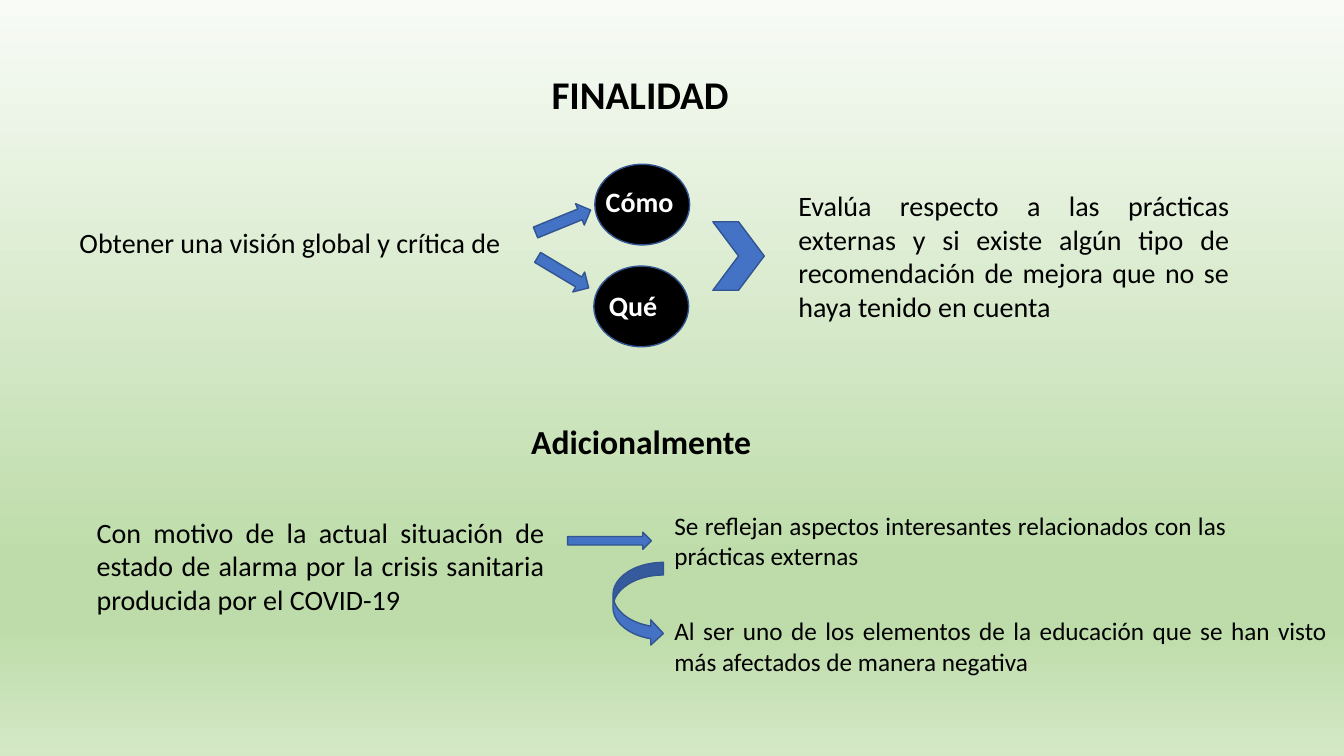
from dataclasses import dataclass

from lxml.etree import SubElement
from pptx import Presentation
from pptx.dml.color import RGBColor
from pptx.enum.shapes import MSO_SHAPE as Preset
from pptx.enum.text import MSO_ANCHOR as Anchor, MSO_AUTO_SIZE as AutoSize, PP_ALIGN as Align
from pptx.oxml.ns import qn
from pptx.util import Inches, Pt


@dataclass(frozen=True)
class Theme:
    """Colours, font and type sizes of the slide."""
    font: str = "Calibri"
    ink: str = "000000"
    light: str = "FFFFFF"
    arrow: str = "4472C4"
    outline: str = "325491"
    backdrop: tuple = ((0, "F8FBF6"), (74, "BEDCAA"), (83, "BEDCAA"), (100, "D4E8C6"))
    title: int = 28
    subtitle: int = 24
    body: int = 20
    detail: int = 18


THEME = Theme()


def paint_background(slide):
    """Fill the slide with the vertical green gradient."""
    fill = slide.background.fill
    fill.gradient()
    fill.gradient_angle = 270
    stops = next(slide.element.iter(qn("a:gsLst")))
    for stop in list(stops):
        stops.remove(stop)
    for percent, colour in THEME.backdrop:
        stop = SubElement(stops, qn("a:gs"), pos=str(percent * 1000))
        SubElement(stop, qn("a:srgbClr"), val=colour)


def write(holder, text, size, colour=THEME.ink, bold=False, align=Align.LEFT):
    """Put formatted text in a text box or placeholder."""
    frame = holder.text_frame
    frame.text = text
    frame.word_wrap = True
    frame.auto_size = AutoSize.SHAPE_TO_FIT_TEXT
    frame.vertical_anchor = Anchor.TOP
    paragraph = frame.paragraphs[0]
    paragraph.alignment = align
    paragraph.line_spacing = 1.0
    font = paragraph.runs[0].font
    font.name, font.size, font.bold = THEME.font, Pt(size), bold
    font.color.rgb = RGBColor.from_string(colour)


def add_title(slide, text, box):
    """Place the heading in the title placeholder."""
    title = slide.shapes.title
    title.left, title.top, title.width, title.height = map(Inches, box)
    write(title, text, THEME.title, bold=True)


def add_text(slide, text, box, size=THEME.body, **style):
    """Add a text box."""
    write(slide.shapes.add_textbox(*map(Inches, box)), text, size, **style)


def add_figure(slide, preset, box, fill=THEME.arrow, rotation=0):
    """Add an outlined preset shape."""
    figure = slide.shapes.add_shape(preset, *map(Inches, box))
    figure.shadow.inherit = False
    figure.rotation = rotation
    figure.fill.solid()
    figure.fill.fore_color.rgb = RGBColor.from_string(fill)
    figure.line.color.rgb = RGBColor.from_string(THEME.outline)
    figure.line.width = Pt(1)


def add_question(slide, text, circle_at, label_at):
    """Add a black circle with its white label."""
    add_figure(slide, Preset.OVAL, (*circle_at, 0.94, 0.8), THEME.ink)
    add_text(slide, text, (*label_at, 0.96, 0.44), colour=THEME.light, bold=True)


def add_purpose(slide):
    """Build the upper half: the aim, its two questions and the outcome."""
    add_title(slide, "FINALIDAD", (5.37, 0.65, 2.07, 0.57))
    add_text(slide, "Obtener una visión global y crítica de", (0.69, 2.19, 5.7, 0.44))
    add_question(slide, "Qué", (5.89, 2.64), (5.94, 2.81))
    add_question(slide, "Cómo", (5.9, 1.63), (5.91, 1.78))
    for top, rotation in ((2.08, 337.8), (2.59, 30.9)):
        add_figure(slide, Preset.RIGHT_ARROW, (5.29, top, 0.59, 0.23), rotation=rotation)
    add_figure(slide, Preset.CHEVRON, (7.07, 2.2, 0.51, 0.68))
    add_text(slide, "Evalúa respecto a las prácticas externas y si existe algún tipo de "
             "recomendación de mejora que no se haya tenido en cuenta",
             (7.82, 1.82, 4.47, 1.45), align=Align.JUSTIFY)


def add_context(slide):
    """Build the lower half: the health crisis and its two consequences."""
    add_text(slide, "Adicionalmente", (5.17, 4.13, 2.46, 0.5), THEME.subtitle, bold=True)
    add_text(slide, "Con motivo de la actual situación de estado de alarma por la crisis "
             "sanitaria producida por el COVID-19",
             (0.86, 5.06, 4.64, 1.11), align=Align.JUSTIFY)
    consequences = (
        ("Se reflejan aspectos interesantes relacionados con las prácticas externas", 5.01, 5.67),
        ("Al ser uno de los elementos de la educación que se han visto más afectados "
         "de manera negativa", 6.06, 6.67),
    )
    for text, top, width in consequences:
        add_text(slide, text, (6.59, top, width, 0.71), THEME.detail, align=Align.JUSTIFY)
    add_figure(slide, Preset.RIGHT_ARROW, (5.63, 5.28, 0.83, 0.17))
    add_figure(slide, Preset.CURVED_RIGHT_ARROW, (6.08, 5.58, 0.5, 0.83))


def main():
    """Build and save the slide."""
    deck = Presentation()
    deck.slide_width, deck.slide_height = Inches(13.33), Inches(7.5)
    slide = deck.slides.add_slide(deck.slide_layouts.get_by_name("Title Only"))
    paint_background(slide)
    add_purpose(slide)
    add_context(slide)
    deck.save("out.pptx")


if __name__ == "__main__":
    main()
